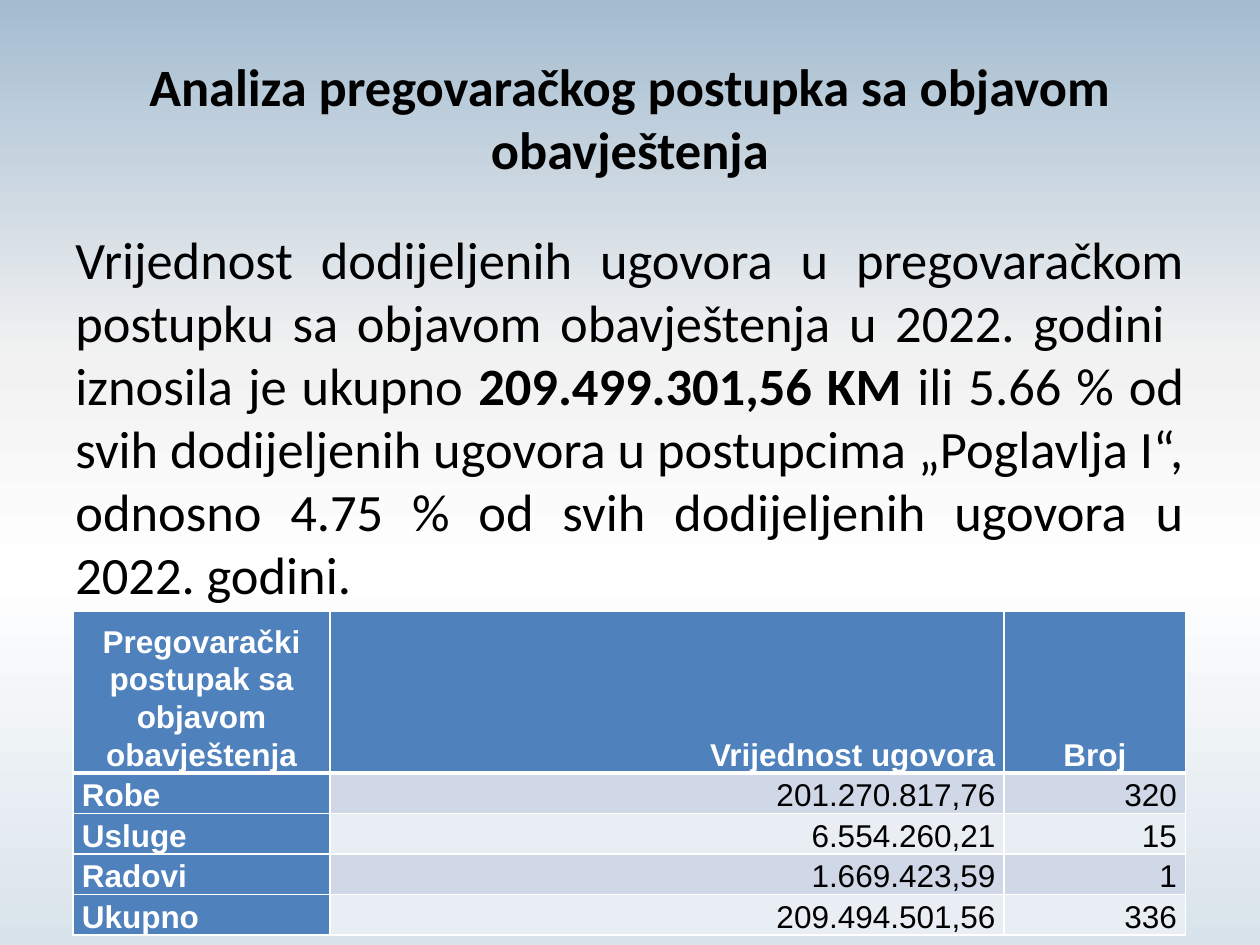
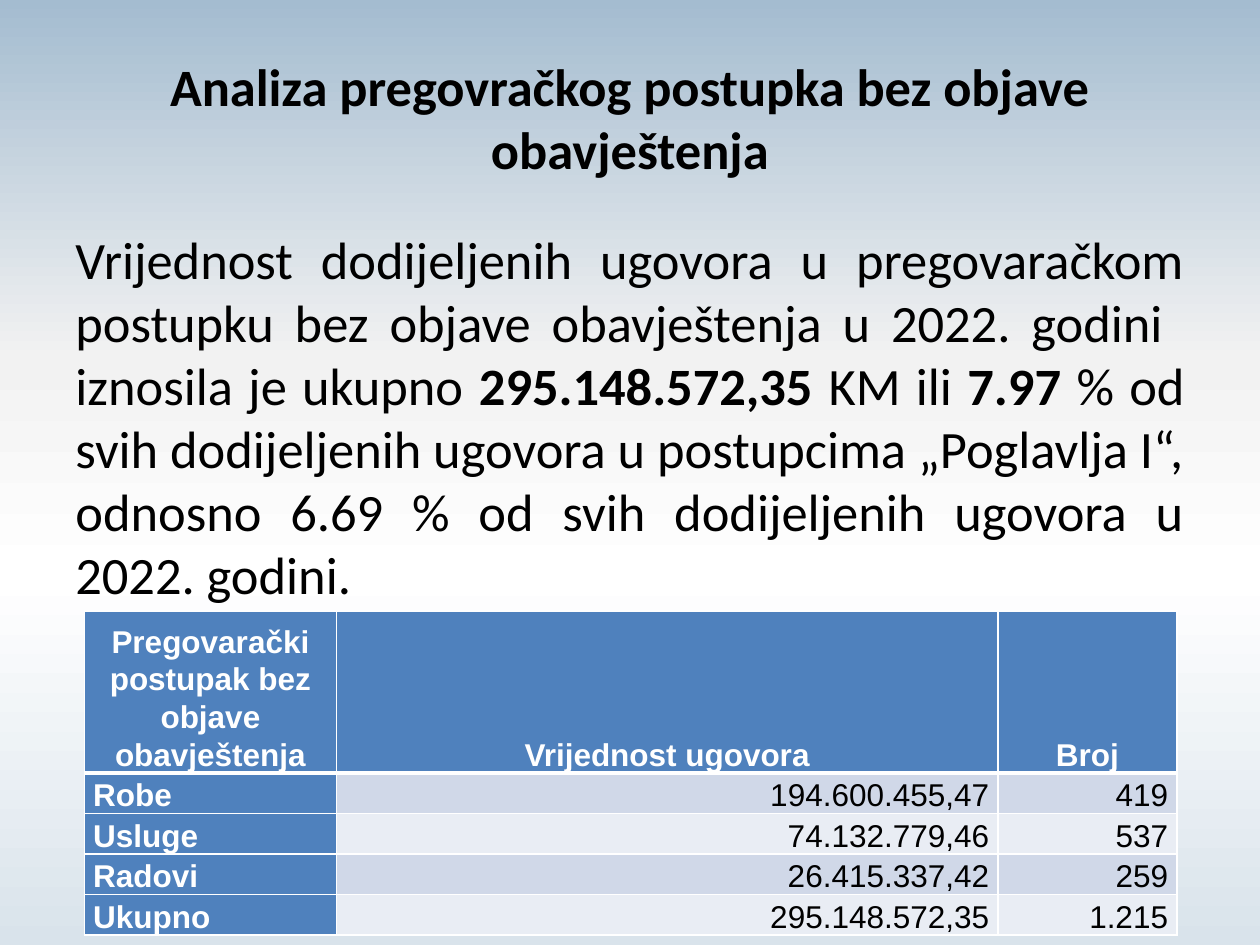
import lxml.etree
import pptx
import pptx.dml.color
import pptx.enum.text
import pptx.oxml.ns
import pptx.util

Inches = pptx.util.Inches
Pt = pptx.util.Pt
RGBColor = pptx.dml.color.RGBColor
Align = pptx.enum.text.PP_ALIGN
Anchor = pptx.enum.text.MSO_ANCHOR
qn = pptx.oxml.ns.qn

BLACK = RGBColor(0x00, 0x00, 0x00)
WHITE = RGBColor(0xFF, 0xFF, 0xFF)
BLUE = RGBColor(0x4F, 0x81, 0xBD)
BAND_DARK = RGBColor(0xD0, 0xD8, 0xE8)
BAND_LIGHT = RGBColor(0xE9, 0xED, 0xF4)
BACKGROUND_STOPS = (
    (0, RGBColor(0xA4, 0xBC, 0xD0)),
    (38, RGBColor(0xF2, 0xF2, 0xF2)),
    (61, WHITE),
    (100, RGBColor(0xD9, 0xE3, 0xEB)),
)


def write(p, text, *, font="Calibri", size=30, color=BLACK, bold=False,
          align=None, line=None, before=None):
    r = p.add_run()
    r.text = text
    r.font.name = font
    r.font.size = Pt(size)
    r.font.color.rgb = color
    r.font.bold = bold
    if align is not None:
        p.alignment = align
    if line is not None:
        p.line_spacing = line
    if before is not None:
        p.space_before = Pt(before)


class Deck:
    def __init__(self):
        self.prs = pptx.Presentation()
        self.prs.slide_width = Inches(10)
        self.prs.slide_height = Inches(7.5)
        self.s = None

    def slide(self, title):
        self.s = self.prs.slides.add_slide(self.prs.slide_layouts[5])
        self.background()
        sp = self.s.shapes.title
        sp.left, sp.top = Inches(0.5), Inches(0.3)
        sp.width, sp.height = Inches(9), Inches(1.25)
        tf = sp.text_frame
        tf.word_wrap = True
        tf.auto_size = pptx.enum.text.MSO_AUTO_SIZE.NONE
        tf.vertical_anchor = Anchor.MIDDLE
        write(tf.paragraphs[0], title, bold=True, align=Align.CENTER)

    def background(self):
        fill = self.s.background.fill
        fill.gradient()
        fill.gradient_angle = 270
        stops = next(self.s.element.iter(qn("a:gsLst")))
        for stop in list(stops):
            stops.remove(stop)
        for position, color in BACKGROUND_STOPS:
            stop = lxml.etree.SubElement(stops, qn("a:gs"), pos=str(position * 1000))
            lxml.etree.SubElement(stop, qn("a:srgbClr"), val=str(color))

    def body(self, runs):
        sp = self.s.shapes.add_textbox(Inches(0.5), Inches(1.75), Inches(9), Inches(4.95))
        tf = sp.text_frame
        tf.word_wrap = True
        for text, bold in runs:
            write(tf.paragraphs[0], text, bold=bold, align=Align.JUSTIFY, before=6)

    def table(self, left, widths, rows, value_header_align):
        heights = [1.19] + [0.3] * (len(rows) - 1)
        frame = self.s.shapes.add_table(
            len(rows), len(widths), Inches(left), Inches(4.85),
            Inches(sum(widths)), Inches(sum(heights)))
        table = frame.table
        for column, width in zip(table.columns, widths):
            column.width = Inches(width)
        for row, height in zip(table.rows, heights):
            row.height = Inches(height)
        header_aligns = (Align.CENTER, value_header_align, Align.CENTER)
        for i, row in enumerate(rows):
            for j, text in enumerate(row):
                if i == 0:
                    align = header_aligns[j]
                else:
                    align = Align.LEFT if j == 0 else Align.RIGHT
                self.cell(table.cell(i, j), text, i, j, align)

    def cell(self, cell, text, row, column, align):
        heading = row == 0 or column == 0
        cell.margin_left = cell.margin_right = Inches(0.07)
        cell.margin_top = cell.margin_bottom = 0
        cell.vertical_anchor = Anchor.BOTTOM
        widths = {"lnL": 1, "lnR": 1, "lnT": 3 if row == 1 else 1,
                  "lnB": 3 if row == 0 else 1}
        for side, width in widths.items():
            self.border(cell, side, width)
        cell.fill.solid()
        band = BAND_DARK if row % 2 else BAND_LIGHT
        cell.fill.fore_color.rgb = BLUE if heading else band
        write(cell.text_frame.paragraphs[0], text, font="Arial", size=18,
              color=WHITE if heading else BLACK, bold=heading, align=align, line=1.07)

    def border(self, cell, side, width):
        tc_pr = cell._tc.get_or_add_tcPr()
        ln = lxml.etree.SubElement(tc_pr, qn("a:" + side), w=str(Pt(width)))
        fill = lxml.etree.SubElement(ln, qn("a:solidFill"))
        lxml.etree.SubElement(fill, qn("a:srgbClr"), val=str(WHITE))


def contract_rows(procedure, values, counts):
    labels = ("Robe", "Usluge", "Radovi", "Ukupno")
    header = (f"Pregovarački postupak {procedure} obavještenja", "Vrijednost ugovora", "Broj")
    return [header, *zip(labels, values, counts)]


def contract_text(procedure, total_runs, share):
    return [
        (f"Vrijednost dodijeljenih ugovora u pregovaračkom postupku {procedure} "
         "obavještenja u 2022. godini  iznosila je ukupno ", False),
        *total_runs,
        ("% od svih dodijeljenih ugovora u postupcima „Poglavlja I“, odnosno "
         f"{share} % od svih dodijeljenih ugovora u 2022. godini.", False),
    ]


def main():
    deck = Deck()

    deck.slide("Analiza pregovaračkog postupka sa objavom obavještenja")
    deck.body(contract_text(
        "sa objavom", [("209.499.301,56 KM", True), (" ili 5.66 ", False)], "4.75"))
    deck.table(0.58, (2.04, 5.35, 1.44), contract_rows(
        "sa objavom",
        ("201.270.817,76", "6.554.260,21", "1.669.423,59", "209.494.501,56"),
        ("320", "15", "1", "336")), Align.RIGHT)

    deck.slide("Analiza pregovračkog postupka bez objave obavještenja")
    deck.body(contract_text(
        "bez objave",
        [("295.148.572,35 ", True), ("KM ili ", False), ("7.97 ", True)], "6.69"))
    deck.table(0.67, (2, 5.25, 1.42), contract_rows(
        "bez objave",
        ("194.600.455,47", "74.132.779,46", "26.415.337,42", "295.148.572,35"),
        ("419", "537", "259", "1.215")), Align.CENTER)

    deck.prs.save("out.pptx")


if __name__ == "__main__":
    main()
